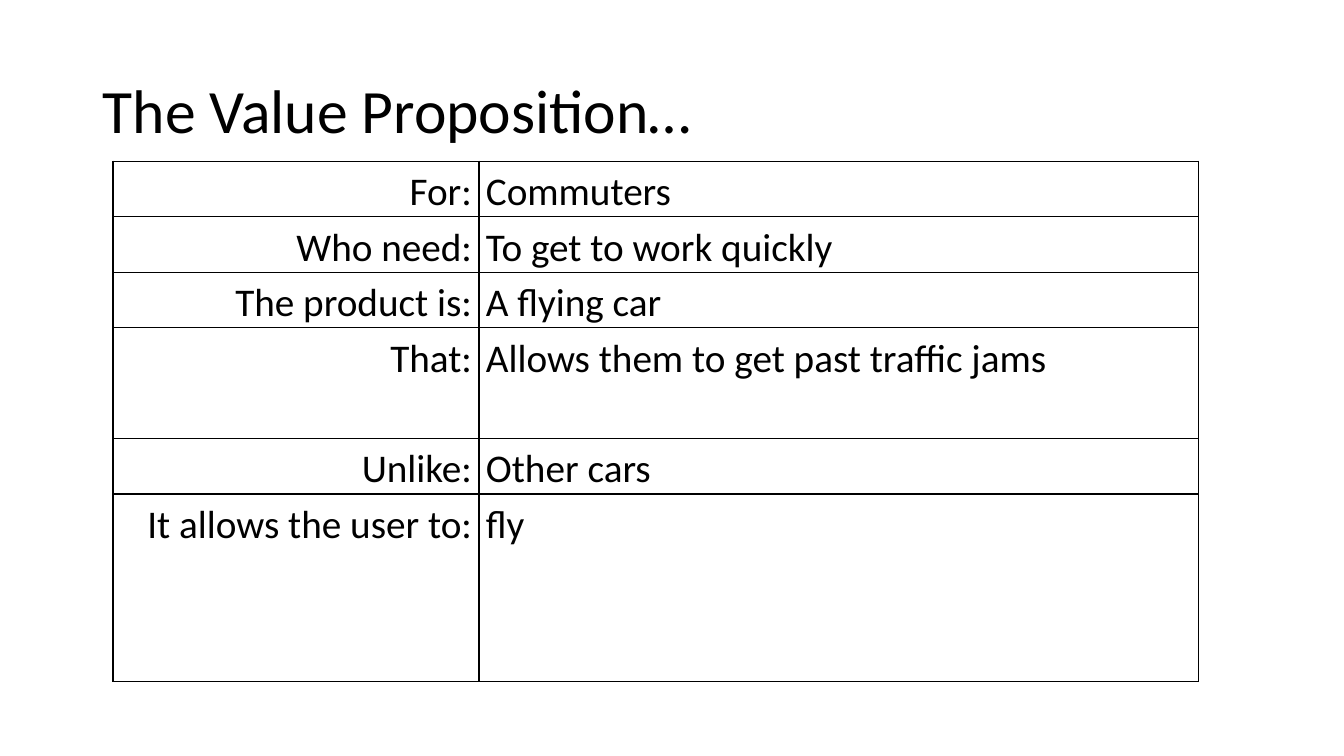
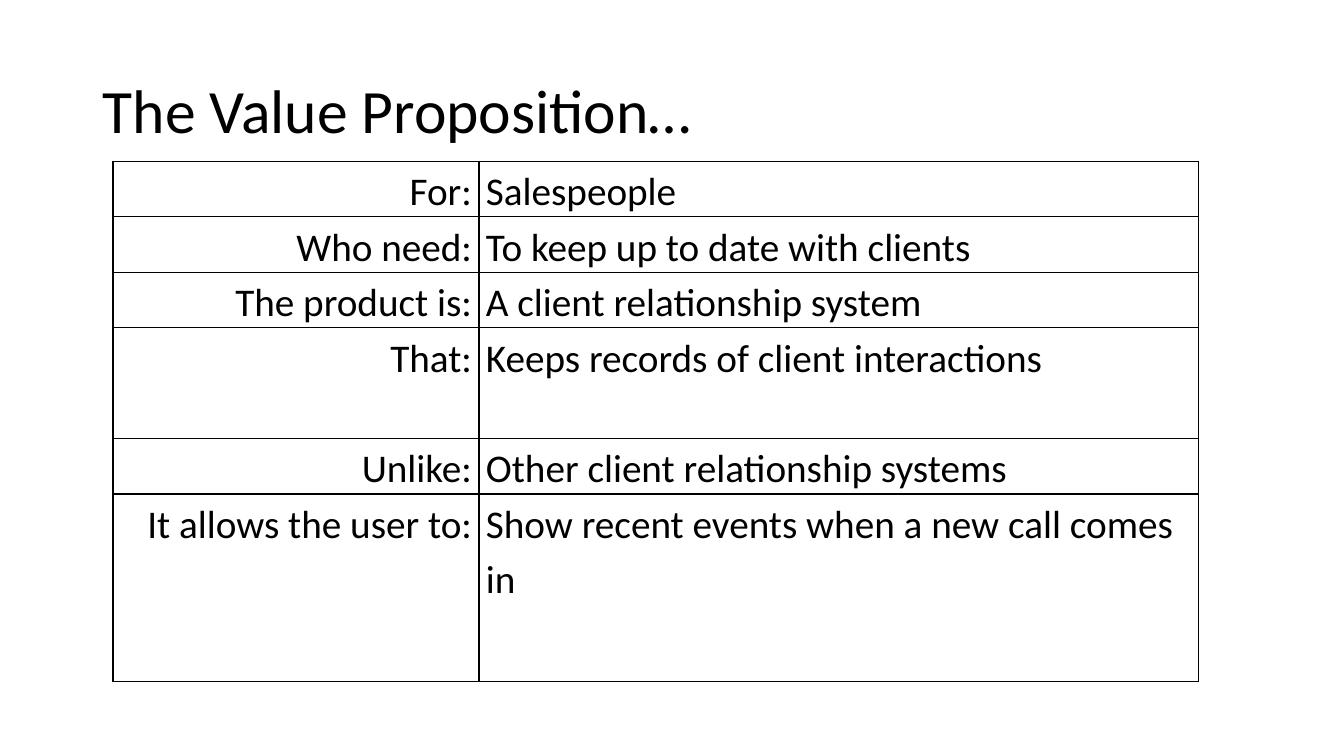
from lxml.etree import SubElement
from pptx import Presentation
from pptx.dml.color import RGBColor
from pptx.enum.text import MSO_ANCHOR, MSO_AUTO_SIZE, PP_ALIGN
from pptx.oxml.ns import qn
from pptx.util import Inches, Pt

SLIDE_WIDTH, SLIDE_HEIGHT = 13.33, 7.5
FONT, INK, PAPER = "Calibri", "000000", "FFFFFF"
TITLE = "The Value Proposition…"
TITLE_BOX = (0.92, 0.4, 11.5, 1.45)
TABLE_LEFT, TABLE_TOP = 1.12, 1.6
COLUMN_WIDTHS = (3.63, 7.14)
LINE = 0.55
ROW_HEIGHTS = (LINE, LINE, LINE, 2 * LINE, LINE, 1.86)
PROMPTS = ("For:", "Who need:", "The product is:", "That:", "Unlike:",
           "It allows the user to:")
PROPOSITIONS = (
    ("Commuters", "To get to work quickly", "A flying car",
     "Allows them to get past traffic jams", "Other cars", "fly"),
    ("Salespeople", "To keep up to date with clients",
     "A client relationship system", "Keeps records of client interactions",
     "Other client relationship systems",
     "Show recent events when a new call comes in"),
)


def color(hex_code):
    return RGBColor.from_string(hex_code)


def write(frame, text, size, align=PP_ALIGN.LEFT, spacing=1.0):
    paragraph = frame.paragraphs[0]
    paragraph.alignment = align
    paragraph.line_spacing = spacing
    run = paragraph.add_run()
    run.text = text
    run.font.name = FONT
    run.font.size = Pt(size)
    run.font.color.rgb = color(INK)


def add_title(slide, text):
    title = slide.shapes.title
    title.left, title.top, title.width, title.height = map(Inches, TITLE_BOX)
    title.text_frame.auto_size = MSO_AUTO_SIZE.NONE
    title.text_frame.vertical_anchor = MSO_ANCHOR.MIDDLE
    write(title.text_frame, text, 44, spacing=0.9)


def outline(cell, width=1):
    """Draw all four borders; the schema wants them ahead of the fill."""
    properties = cell._tc.get_or_add_tcPr()
    for position, side in enumerate(("lnL", "lnR", "lnT", "lnB")):
        border = SubElement(properties, qn(f"a:{side}"), w=str(Pt(width)))
        fill = SubElement(border, qn("a:solidFill"))
        SubElement(fill, qn("a:srgbClr"), val=INK)
        properties.insert(position, border)


def fill_cell(cell, text, align):
    cell.margin_left = cell.margin_right = Inches(0.07)
    cell.margin_top = cell.margin_bottom = 0
    cell.fill.solid()
    cell.fill.fore_color.rgb = color(PAPER)
    outline(cell)
    write(cell.text_frame, text, 28, align=align, spacing=1.15)


def add_proposition(slide, answers):
    table = slide.shapes.add_table(
        len(PROMPTS), len(COLUMN_WIDTHS), Inches(TABLE_LEFT), Inches(TABLE_TOP),
        Inches(sum(COLUMN_WIDTHS)), Inches(sum(ROW_HEIGHTS))).table
    table.first_row = table.horz_banding = False
    for column, width in zip(table.columns, COLUMN_WIDTHS):
        column.width = Inches(width)
    for row, height, prompt, answer in zip(table.rows, ROW_HEIGHTS, PROMPTS, answers):
        row.height = Inches(height)
        fill_cell(row.cells[0], prompt, PP_ALIGN.RIGHT)
        fill_cell(row.cells[1], answer, PP_ALIGN.LEFT)


def main():
    deck = Presentation()
    deck.slide_width, deck.slide_height = Inches(SLIDE_WIDTH), Inches(SLIDE_HEIGHT)
    title_only = deck.slide_layouts.get_by_name("Title Only")
    for answers in PROPOSITIONS:
        slide = deck.slides.add_slide(title_only)
        add_title(slide, TITLE)
        add_proposition(slide, answers)
    deck.save("out.pptx")


if __name__ == "__main__":
    main()
